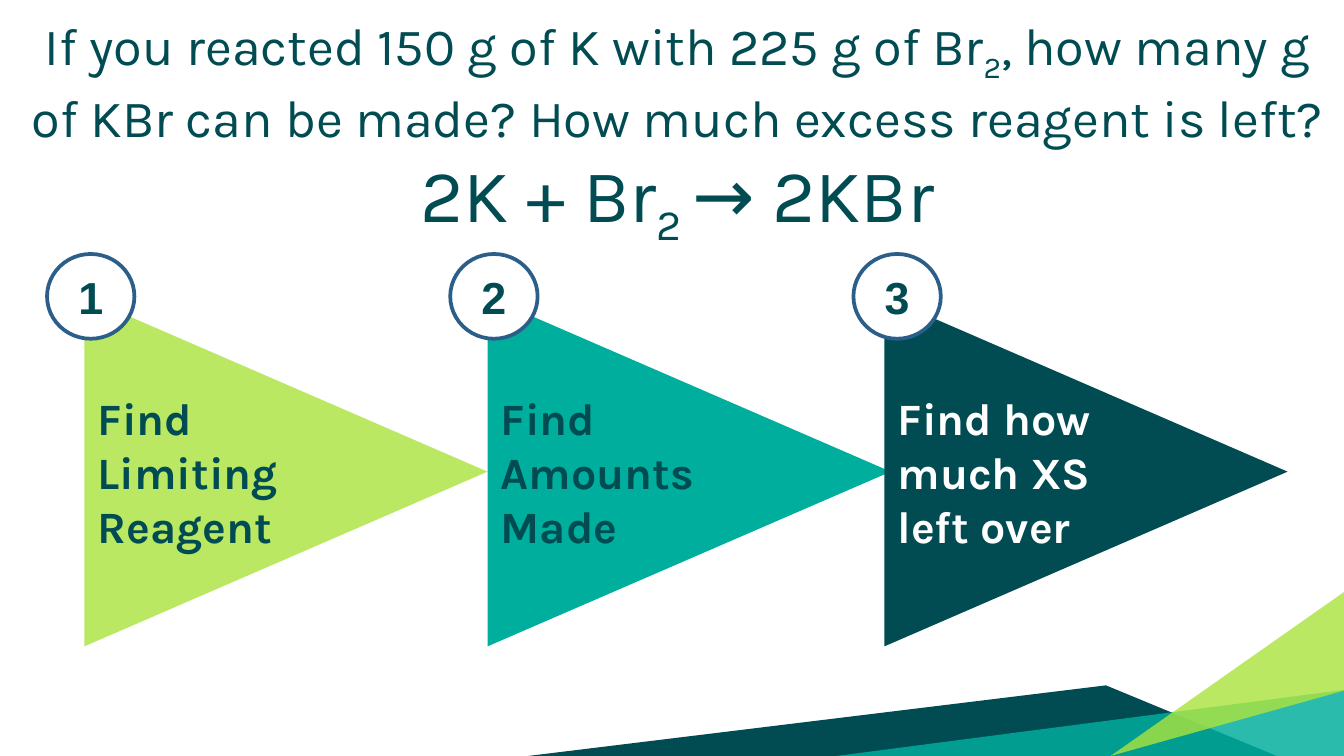
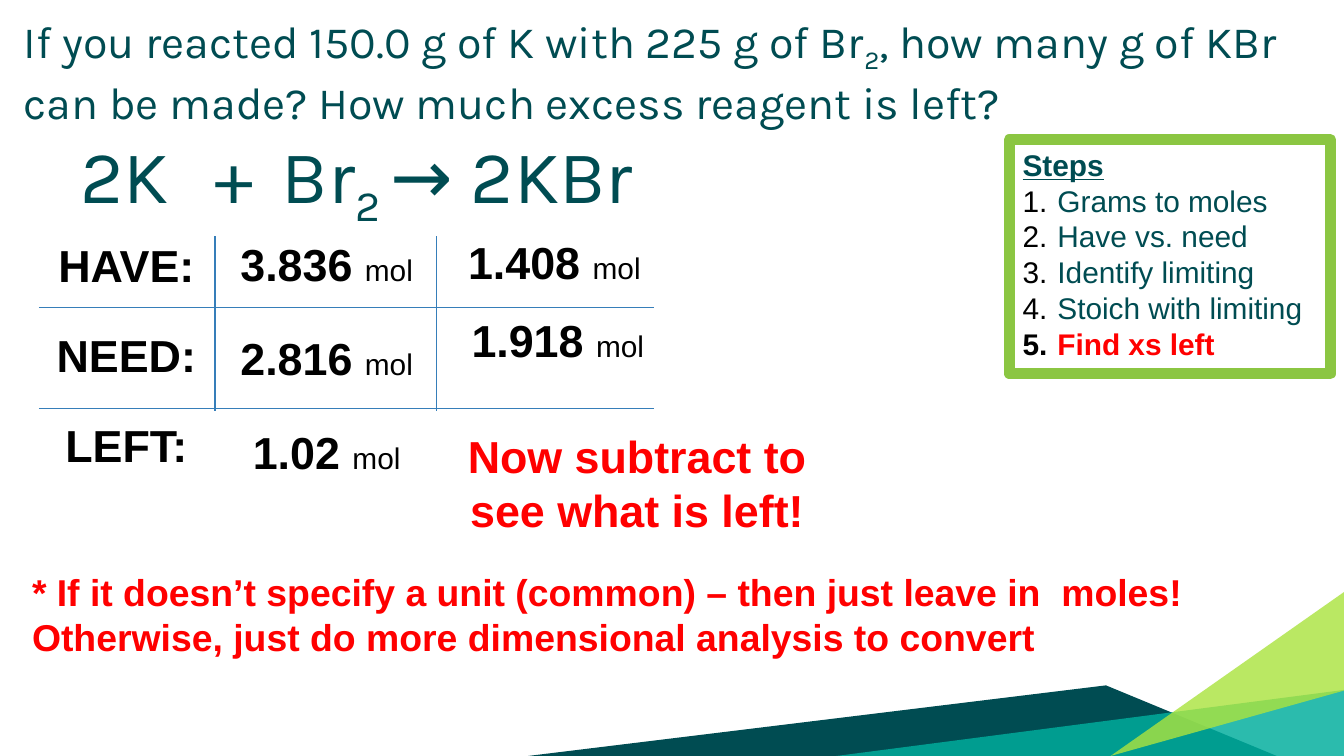
from lxml import etree
from pptx import Presentation
from pptx.dml.color import RGBColor
from pptx.enum.shapes import MSO_CONNECTOR, MSO_SHAPE
from pptx.enum.text import MSO_ANCHOR, PP_ALIGN
from pptx.oxml.ns import qn
from pptx.util import Pt

COLORS = {
    "dark": "004C52",
    "teal": "00AE9D",
    "lime": "ABE33F",
    "white": "FFFFFF",
    "black": "000000",
    "red": "FF0000",
    "ring": "2B5F8A",
    "frame": "8BC642",
    "rule": "367EB9",
}
SUB = -25


def rgb(name):
    return RGBColor.from_string(COLORS[name])


def paint(sp, fill=None, alpha=None, line=None, width=1):
    sp.shadow.inherit = False
    if fill:
        sp.fill.solid()
        sp.fill.fore_color.rgb = rgb(fill)
        if alpha:
            clr = sp.fill._xPr.find(qn("a:solidFill"))[0]
            etree.SubElement(clr, qn("a:alpha"), val=str(alpha * 1000))
    else:
        sp.fill.background()
    if line:
        sp.line.color.rgb = rgb(line)
        sp.line.width = Pt(width)
    else:
        sp.line.fill.background()


def add_box(s, at, kind=MSO_SHAPE.RECTANGLE, **look):
    sp = s.shapes.add_shape(kind, *map(Pt, at))
    paint(sp, **look)
    return sp


def add_polygon(s, points, fill, alpha=None):
    pts = [(Pt(x), Pt(y)) for x, y in points]
    fb = s.shapes.build_freeform(*pts[0], scale=1.0)
    fb.add_line_segments(pts[1:], close=True)
    paint(fb.convert_to_shape(), fill, alpha)


def add_rule(s, x1, y1, x2, y2):
    c = s.shapes.add_connector(MSO_CONNECTOR.STRAIGHT, Pt(x1), Pt(y1), Pt(x2), Pt(y2))
    c.line.color.rgb = rgb("rule")
    c.line.width = Pt(0.75)
    etree.SubElement(c._element.spPr, qn("a:effectLst"))


def set_frame(sp, anchor=MSO_ANCHOR.TOP, wrap=True, insets=(7.2, 3.6, 7.2, 3.6)):
    tf = sp.text_frame
    tf.word_wrap = wrap
    tf.vertical_anchor = anchor
    tf.margin_left, tf.margin_top, tf.margin_right, tf.margin_bottom = map(Pt, insets)
    return tf


def add_run(p, text, size=24, font="Arial", color="black", bold=False,
            underline=False, baseline=0):
    for i, part in enumerate(text.split("\n")):
        if i:
            p.add_line_break()
        if not part:
            continue
        r = p.add_run()
        r.text = part
        r.font.size = Pt(size)
        r.font.name = font
        r.font.bold = bold
        r.font.underline = underline
        r.font.color.rgb = rgb(color)
        if baseline:
            r.font._element.set("baseline", str(baseline * 1000))


def add_para(tf, runs, align=PP_ALIGN.LEFT, before=0, margin=0, indent=0,
             numbered=False, tabs=(), **fmt):
    p = tf.paragraphs[0]
    if p.runs:
        p = tf.add_paragraph()
    p.alignment = align
    p.space_before = Pt(before)
    pPr = p._p.get_or_add_pPr()
    pPr.set("marL", str(Pt(margin)))
    pPr.set("indent", str(Pt(indent)))
    if numbered:
        clr = etree.SubElement(pPr, qn("a:buClr"))
        etree.SubElement(clr, qn("a:srgbClr"), val=COLORS["black"])
        etree.SubElement(pPr, qn("a:buAutoNum"), type="arabicPeriod")
    if tabs:
        tab_list = etree.SubElement(pPr, qn("a:tabLst"))
        for pos in tabs:
            etree.SubElement(tab_list, qn("a:tab"), pos=str(Pt(pos)), algn="l")
    for text, extra in runs:
        add_run(p, text, **{**fmt, **extra})


def add_text(s, at, runs, align=PP_ALIGN.CENTER, **fmt):
    sp = s.shapes.add_textbox(*map(Pt, at))
    add_para(set_frame(sp, MSO_ANCHOR.MIDDLE), runs, align, **fmt)


def add_question(s, height):
    sp = add_box(s, (0, 0, 720, height), fill="white")
    return set_frame(sp, insets=(7.2,) * 4)


def question_runs(grams):
    return [(f"If you reacted {grams} g of K with 225 g of Br", {}),
            ("2", {"baseline": SUB}),
            (", how many g of KBr can be made? How much excess reagent is left?", {})]


def equation_runs(start):
    return [(start, {"size": 40}),
            ("2 ", {"size": 40, "baseline": SUB}),
            ("→ 2KBr", {"size": 40})]


def add_slide(prs):
    s = prs.slides.add_slide(prs.slide_layouts[6])
    add_polygon(s, [(283, 405), (684, 405), (592.5, 367.2)], "dark")
    add_polygon(s, [(720, 369.6), (720, 405), (448, 405)], "teal", 83)
    add_polygon(s, [(720, 370), (720, 317.2), (595, 405)], "lime", 81)
    return s


def add_step(s, number, x, text, fill, color, alpha=None):
    sp = add_box(s, (x, 159.1, 216, 187.2), MSO_SHAPE.PENTAGON, fill=fill, alpha=alpha)
    sp.adjustments[0] = 2.12
    tf = set_frame(sp, MSO_ANCHOR.MIDDLE, "\n" not in text, (7.2, 0, 0, 0))
    add_para(tf, [(text, {})], font="Karla", color=color, bold=True)


def add_badge(s, number):
    sp = add_box(s, (25.2 + 216 * (number - 1), 136.1, 46.8, 45.4), MSO_SHAPE.OVAL,
                 fill="white", line="ring", width=2)
    add_para(set_frame(sp, MSO_ANCHOR.MIDDLE), [(str(number), {})], PP_ALIGN.CENTER,
             color="dark", bold=True)


def add_amount(s, x, y, width, value):
    add_text(s, (x, y, width, 33.1),
             [(value + " ", {"bold": True}), ("mol", {"size": 16})])


def add_steps_list(s):
    sp = add_box(s, (540.7, 74.9, 172.1, 125.3), fill="white", line="frame", width=6)
    tf = set_frame(sp)
    add_para(tf, [("Steps\t", {})], tabs=[127.6], size=16, color="dark",
             bold=True, underline=True)
    for text in ("Grams to moles", "Have vs. need", "Identify limiting",
                 "Stoich with limiting", "Find xs left"):
        last = text == "Find xs left"
        add_para(tf, [(text, {})], margin=18.7, indent=-18.7, numbered=True,
                 size=16, color="red" if last else "dark", bold=last)


def build_overview(prs):
    s = add_slide(prs)
    add_para(add_question(s, 136.1),
             question_runs("150") + [("\n", {})] + equation_runs("2K + Br"),
             PP_ALIGN.CENTER, before=6, margin=5.76, size=28, font="Karla", color="dark")
    steps = [(45.2, "Find Limiting Reagent", "lime", "dark", 81),
             (261.2, "Find \nAmounts \nMade", "teal", "dark"),
             (473.8, "Find how \nmuch XS \nleft over", "dark", "white")]
    for number, step in enumerate(steps, 1):
        add_step(s, number, *step)
    for number in range(1, len(steps) + 1):
        add_badge(s, number)


def build_leftover(prs):
    s = add_slide(prs)
    tf = add_question(s, 116.6)
    style = {"font": "Karla", "color": "dark"}
    add_para(tf, question_runs("150.0"), before=6, margin=5.76, **style)
    add_para(tf, equation_runs("\t2K\t+\tBr"), tabs=[128.5, 203, 243], **style)
    add_steps_list(s)

    for y in (164.9, 218.9):
        add_rule(s, 20.9, y, 350.6, y)
    for x in (115.2, 234):
        add_rule(s, x, 126.7, x, 220.3)
    for row, label in enumerate(("HAVE:", "NEED:", "LEFT:")):
        add_text(s, (20.9, 125.3 + 48.2 * row, 93.6, 33.1), [(label, {})], bold=True)
    for row, value in enumerate(("3.836", "2.816", "1.02")):
        add_amount(s, 121, 124.6 + 50.4 * row, 108, value)
    add_amount(s, 241.9, 123.8, 110.2, "1.408")
    add_amount(s, 238.3, 165.6, 121, "1.918")

    add_text(s, (241.9, 241.9, 198.7, 33.1),
             [("Now subtract to see what is left!", {})], color="red", bold=True)
    add_text(s, (10.1, 312.5, 637.9, 33.1),
             [("* If it doesn’t specify a unit (common) – then just leave in  moles! "
               "Otherwise, just do more dimensional analysis to convert", {})],
             PP_ALIGN.LEFT, size=20, color="red", bold=True)


def main():
    prs = Presentation()
    prs.slide_width, prs.slide_height = Pt(720), Pt(405)
    build_overview(prs)
    build_leftover(prs)
    prs.save("out.pptx")


if __name__ == "__main__":
    main()
